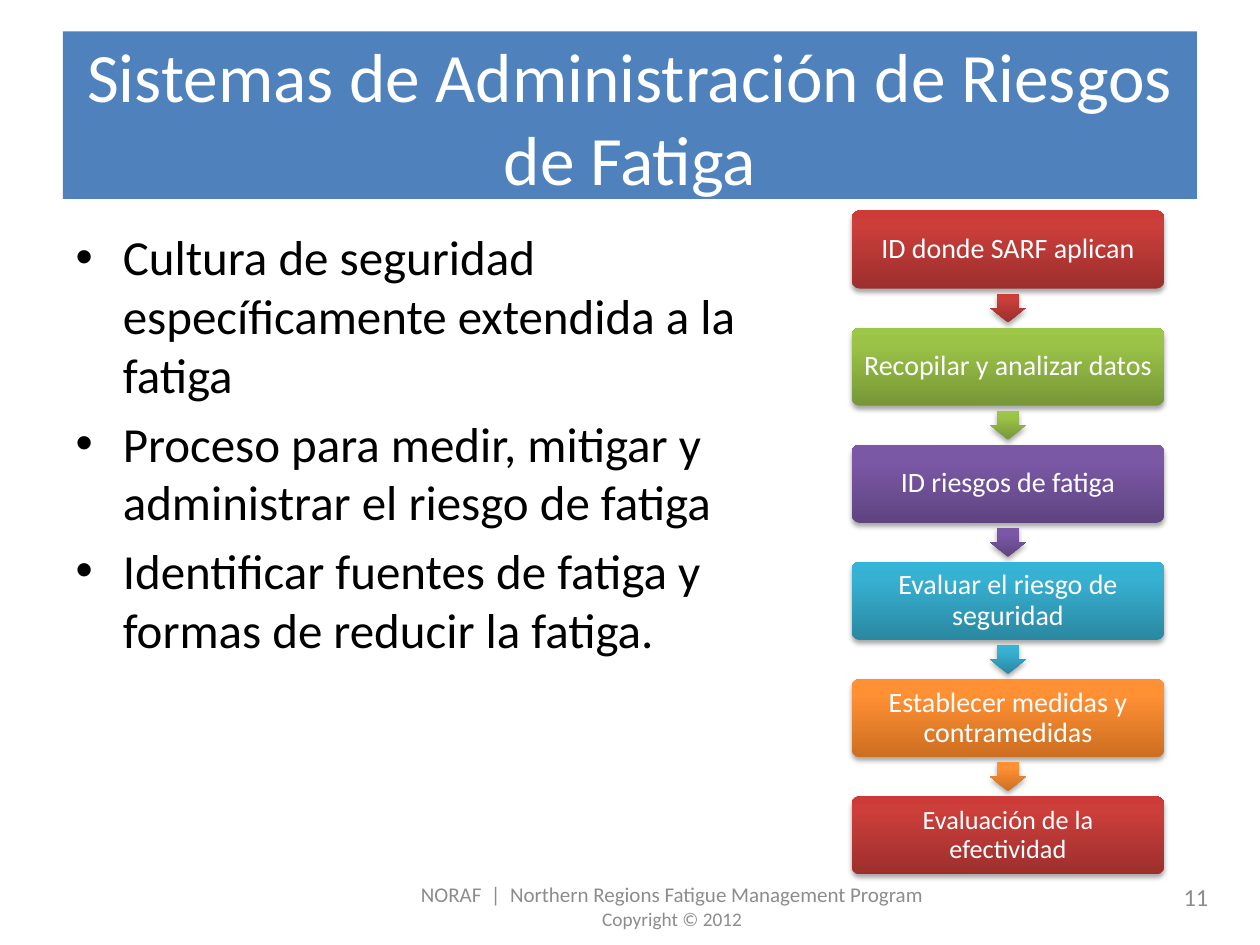
"""Builds a slide on fatigue risk management systems with a six-step flow."""
import copy

import pptx
import pptx.dml.color
import pptx.enum.shapes
import pptx.enum.text
import pptx.oxml
import pptx.oxml.ns
import pptx.util

Inches = pptx.util.Inches
Pt = pptx.util.Pt
SHAPE = pptx.enum.shapes.MSO_SHAPE
ALIGN = pptx.enum.text.PP_ALIGN
ANCHOR = pptx.enum.text.MSO_ANCHOR
qn = pptx.oxml.ns.qn

RED = ("9C2F2D", "CB3E3A", "CE3B37")
GREEN = ("779737", "9BC348", "9DC746")
PURPLE = ("5F4480", "7B58A6", "7C57A8")
TEAL = ("2A88A2", "37B1D2", "34B4D6")
ORANGE = ("CC6E20", "FF9034", "FF9136")

STEPS = [
    ("ID donde SARF aplican", RED, 16),
    ("Recopilar y analizar datos", GREEN, 16),
    ("ID riesgos de fatiga", PURPLE, 16),
    ("Evaluar el riesgo de seguridad", TEAL, 16),
    ("Establecer medidas y contramedidas", ORANGE, 16),
    ("Evaluación de la efectividad", RED, 15),
]
BULLETS = [
    "Cultura de seguridad específicamente extendida a la fatiga",
    "Proceso para medir, mitigar y administrar el riesgo de fatiga",
    "Identificar fuentes de fatiga y formas de reducir la fatiga.",
]
SHADOW = (
    '<a:outerShdw xmlns:a="http://schemas.openxmlformats.org/drawingml/2006/main" '
    'blurRad="39400" dist="22900" dir="5400000" rotWithShape="0">'
    '<a:srgbClr val="000000"><a:alpha val="35000"/></a:srgbClr></a:outerShdw>'
)


def rgb(value):
    """Return the colour for a hex string."""
    return pptx.dml.color.RGBColor.from_string(value)


def place(sp, left, top, width, height):
    """Move and size a shape, in inches."""
    sp.left, sp.top = Inches(left), Inches(top)
    sp.width, sp.height = Inches(width), Inches(height)


def style(p, size, color, align=None):
    """Set the font and alignment of a paragraph."""
    p.font.name = "Calibri"
    p.font.size = Pt(size)
    p.font.color.rgb = rgb(color)
    p.alignment = align


def write(sp, lines, color, align=None, anchor=ANCHOR.MIDDLE):
    """Fill a shape with (text, size) lines."""
    tf = sp.text_frame
    tf.word_wrap = True
    tf.auto_size = pptx.enum.text.MSO_AUTO_SIZE.NONE
    tf.vertical_anchor = anchor
    for i, (text, size) in enumerate(lines):
        p = tf.add_paragraph() if i else tf.paragraphs[0]
        p.text = text
        style(p, size, color, align)
    return tf


def add_label(s, box, lines, align):
    """Add a grey text box."""
    sp = s.shapes.add_textbox(*map(Inches, box))
    tf = write(sp, lines, "8C8C8C", align)
    tf.margin_top = tf.margin_bottom = 0


def add_band(s):
    """Add the blue band behind the title."""
    sp = s.shapes.add_shape(SHAPE.RECTANGLE, *map(Inches, (0.5, 0.25, 9, 1.33)))
    sp.shadow.inherit = False
    sp.fill.solid()
    sp.fill.fore_color.rgb = rgb("4F81BD")
    sp.line.fill.background()
    s.shapes.title._element.addprevious(sp._element)


def add_glossy(s, kind, box, colors):
    """Add a shape with a vertical gradient and a soft shadow."""
    sp = s.shapes.add_shape(kind, *map(Inches, box))
    sp.fill.gradient()
    sp.fill.gradient_angle = 90
    stops = sp._element.spPr.find(qn("a:gradFill")).find(qn("a:gsLst"))
    stops.append(copy.deepcopy(stops[-1]))
    for stop, color, position in zip(sp.fill.gradient_stops, colors, (0, 0.8, 1)):
        stop.color.rgb = rgb(color)
        stop.position = position
    sp.line.fill.background()
    sp.shadow.inherit = False
    effects = sp._element.spPr.find(qn("a:effectLst"))
    effects.append(pptx.oxml.parse_xml(SHADOW))
    return sp


def add_step(s, top, text, colors, size):
    """Add one rounded step of the flow."""
    sp = add_glossy(s, SHAPE.ROUNDED_RECTANGLE, (6.76, top, 2.48, 0.62), colors)
    sp.adjustments[0] = 0.1
    tf = write(sp, [(text, size)], "FFFFFF", ALIGN.CENTER)
    tf.margin_left = tf.margin_right = Inches(0.07)
    tf.margin_top = tf.margin_bottom = Inches(0.07)
    tf.paragraphs[0].line_spacing = 0.9


def add_arrow(s, top, colors):
    """Add the arrow that leads to the next step."""
    sp = add_glossy(s, SHAPE.DOWN_ARROW, (7.86, top, 0.28, 0.23), colors)
    sp.adjustments[0] = 0.6
    sp.adjustments[1] = 0.5


def add_flow(s):
    """Add the column of steps and arrows."""
    for i, (text, colors, size) in enumerate(STEPS):
        top = 1.67 + 0.93 * i
        add_step(s, top, text, colors, size)
        if i < len(STEPS) - 1:
            add_arrow(s, top + 0.66, colors)


def main():
    """Build and save the slide."""
    prs = pptx.Presentation()
    prs.slide_width, prs.slide_height = Inches(10), Inches(7.5)
    s = prs.slides.add_slide(prs.slide_layouts[1])
    title, body = s.shapes.title, s.placeholders[1]
    place(title, 0.5, 0.3, 9, 1.25)
    write(title, [("Sistemas de Administración de Riesgos de Fatiga", 39.6)],
          "FFFFFF", ALIGN.CENTER)
    place(body, 0.5, 1.75, 5.75, 4.95)
    write(body, [(text, 28) for text in BULLETS], "000000", anchor=ANCHOR.TOP)
    add_band(s)
    add_label(s, (3, 7, 4.67, 0.38),
              [("NORAF  |  Northern Regions Fatigue Management Program", 12),
               ("Copyright © 2012", 11)], ALIGN.CENTER)
    add_label(s, (7.36, 6.92, 2.33, 0.4), [("11", 14)], ALIGN.RIGHT)
    add_flow(s)
    prs.save("out.pptx")


if __name__ == "__main__":
    main()
